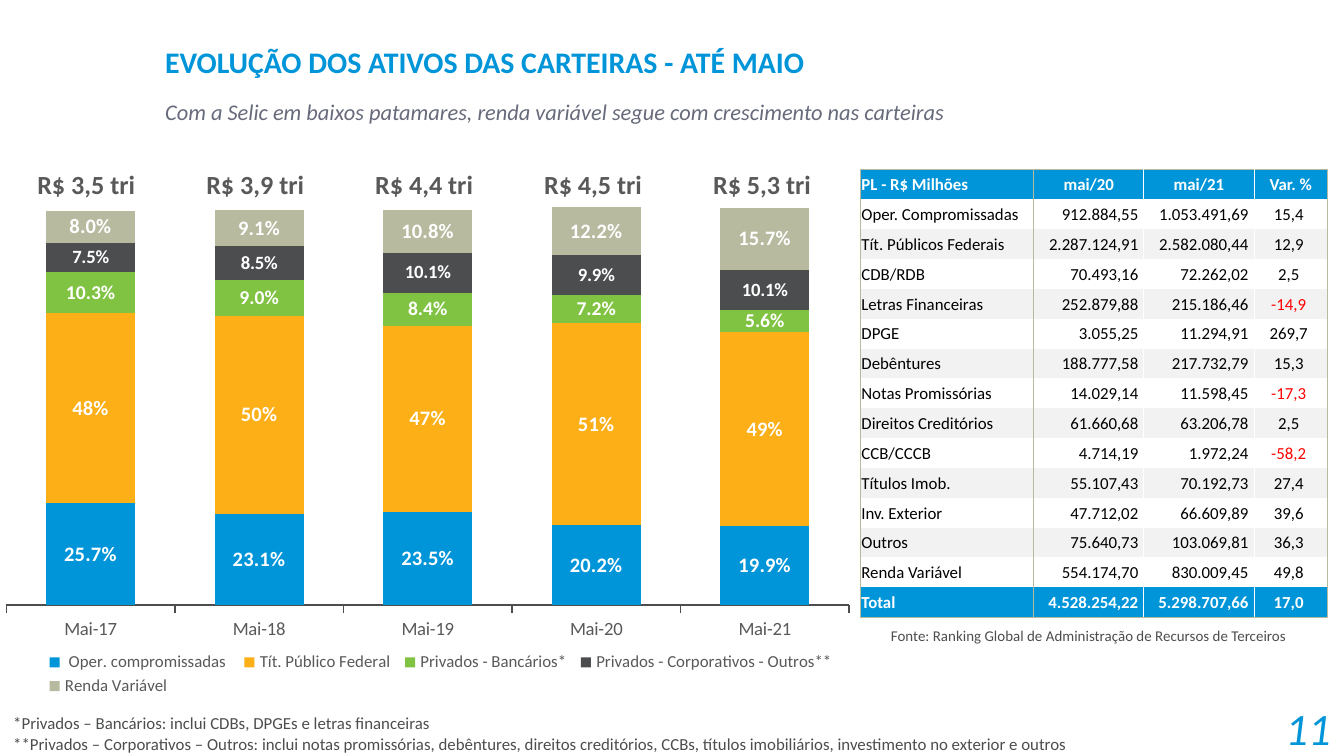
from lxml.etree import SubElement
from pptx import Presentation
from pptx.chart.data import CategoryChartData
from pptx.dml.color import RGBColor
from pptx.enum.chart import XL_CHART_TYPE, XL_LABEL_POSITION, XL_LEGEND_POSITION, XL_TICK_MARK
from pptx.enum.text import MSO_ANCHOR, PP_ALIGN
from pptx.oxml import parse_xml
from pptx.oxml.ns import nsdecls, qn
from pptx.util import Pt

FONT = "Calibri"
BLUE, DARK, GREY, SAND = "0095D9", "4C4D4F", "595959", "B7BA9F"
WHITE, BLACK, RED, BAND = "FFFFFF", "000000", "FF0000", "F2F2F2"
LEFT, CENTER, RIGHT = PP_ALIGN.LEFT, PP_ALIGN.CENTER, PP_ALIGN.RIGHT

# Content
TITLE = "EVOLUÇÃO DOS ATIVOS DAS CARTEIRAS - ATÉ MAIO"
SUBTITLE = "Com a Selic em baixos patamares, renda variável segue com crescimento nas carteiras"
NOTES = ("*Privados – Bancários: inclui CDBs, DPGEs e letras financeiras \v"
         "**Privados – Corporativos – Outros: inclui notas promissórias, debêntures, direitos "
         "creditórios, CCBs, títulos imobiliários, investimento no exterior e outros")
SOURCE = "Fonte: Ranking Global de Administração de Recursos de Terceiros"
MONTHS = ["Mai-17", "Mai-18", "Mai-19", "Mai-20", "Mai-21"]
TOTALS = ["R$ 3,5 tri", "R$ 3,9 tri", "R$ 4,4 tri", "R$ 4,5 tri", "R$ 5,3 tri"]
# Name, values, colour, label size, label format
SERIES = [
    (" Oper. compromissadas ", [0.257, 0.231, 0.235, 0.202, 0.199], BLUE, 11, "0.0%"),
    ("Tít. Público Federal", [0.48, 0.5, 0.47, 0.51, 0.49], "FCAF17", 11, "0%"),
    ("Privados - Bancários*", [0.103, 0.09, 0.084, 0.072, 0.056], "80C342", 10.5, "0.0%"),
    ("Privados - Corporativos - Outros**", [0.075, 0.085, 0.101, 0.099, 0.101], DARK, 10, "0.0%"),
    ("Renda Variável", [0.08, 0.091, 0.108, 0.122, 0.157], SAND, 11, "0.0%"),
]
ROWS = [
    ("PL - R$ Milhões", "mai/20", "mai/21", "Var. %"),
    ("Oper. Compromissadas", "912.884,55", "1.053.491,69", "15,4"),
    ("Tít. Públicos Federais", "2.287.124,91", "2.582.080,44", "12,9"),
    ("CDB/RDB", "70.493,16", "72.262,02", "2,5"),
    ("Letras Financeiras", "252.879,88", "215.186,46", "-14,9"),
    ("DPGE", "3.055,25", "11.294,91", "269,7"),
    ("Debêntures", "188.777,58", "217.732,79", "15,3"),
    ("Notas Promissórias", "14.029,14", "11.598,45", "-17,3"),
    ("Direitos Creditórios", "61.660,68", "63.206,78", "2,5"),
    ("CCB/CCCB", "4.714,19", "1.972,24", "-58,2"),
    ("Títulos Imob.", "55.107,43", "70.192,73", "27,4"),
    ("Inv. Exterior", "47.712,02", "66.609,89", "39,6"),
    ("Outros", "75.640,73", "103.069,81", "36,3"),
    ("Renda Variável", "554.174,70", "830.009,45", "49,8"),
    ("Total", "4.528.254,22", "5.298.707,66", "17,0"),
]
COL_WIDTHS = [93, 59, 59, 39.5]
ROW_HEIGHT = 16


def rgb(color):
    return RGBColor.from_string(color)


def style(font, size, color, bold=False, italic=False):
    font.name, font.size, font.bold, font.italic = FONT, Pt(size), bold, italic
    font.color.rgb = rgb(color)


def write(tf, text, size=9, color=DARK, bold=False, italic=False, align=LEFT):
    p = tf.paragraphs[0]
    p.text, p.alignment = text, align
    for r in p.runs:
        style(r.font, size, color, bold, italic)


def text_box(s, box, text, anchor=MSO_ANCHOR.TOP, **fmt):
    tf = s.shapes.add_textbox(*map(Pt, box)).text_frame
    tf.word_wrap, tf.vertical_anchor = True, anchor
    write(tf, text, **fmt)


def set_layout(parent, index, target, x, y, w, h):
    """Place a chart part by fractions of the chart area."""
    for old in parent.findall(qn("c:layout")):
        parent.remove(old)
    inner = '<c:layoutTarget val="inner"/>' if target else ""
    parent.insert(index, parse_xml(
        f'<c:layout {nsdecls("c")}><c:manualLayout>{inner}'
        f'<c:xMode val="edge"/><c:yMode val="edge"/><c:x val="{x}"/><c:y val="{y}"/>'
        f'<c:w val="{w}"/><c:h val="{h}"/></c:manualLayout></c:layout>'))


def add_borders(cell, **colors):
    tcPr = cell._tc.get_or_add_tcPr()
    for i, (side, color) in enumerate(colors.items()):
        ln = SubElement(tcPr, qn(f"a:ln{side}"), w=str(Pt(0.5)))
        fill = SubElement(ln, qn("a:solidFill"))
        SubElement(fill, qn("a:srgbClr"), val=color)
        tcPr.insert(i, ln)


def add_chart(s):
    data = CategoryChartData()
    data.categories = MONTHS
    for name, values, *_ in SERIES:
        data.add_series(name, values)
    chart = s.shapes.add_chart(XL_CHART_TYPE.COLUMN_STACKED, Pt(3), Pt(66.2),
                               Pt(456.5), Pt(309), data).chart
    style(chart.font, 10, BLACK, bold=True)
    chart.has_title = False
    plot = chart.plots[0]
    plot.gap_width, plot.overlap, plot.vary_by_categories = 89, 100, False
    for series, (_, _, color, size, fmt) in zip(plot.series, SERIES):
        series.format.fill.solid()
        series.format.fill.fore_color.rgb = rgb(color)
        labels = series.data_labels
        labels.show_value, labels.position = True, XL_LABEL_POSITION.CENTER
        labels.number_format, labels.number_format_is_linked = fmt, False
        style(labels.font, size, WHITE, bold=True)

    # Axes: the hidden scale leaves room for the totals above the bars
    values, months = chart.value_axis, chart.category_axis
    values.minimum_scale, values.maximum_scale = 0, 1.2
    values.visible = values.has_major_gridlines = False
    months.major_tick_mark = XL_TICK_MARK.OUTSIDE
    months.format.line.color.rgb = rgb(DARK)
    months.format.line.width = Pt(0.75)
    style(months.tick_labels.font, 10, GREY)

    chart.has_legend = True
    legend = chart.legend
    legend.position, legend.include_in_layout = XL_LEGEND_POSITION.BOTTOM, False
    style(legend.font, 9, GREY)
    set_layout(legend._element, 1, False, 0.04, 0.91, 0.94, 0.09)
    set_layout(chart._chartSpace.chart.plotArea, 0, True, 0, 0.011, 0.99, 0.824)


def add_assets_table(s):
    frame = s.shapes.add_table(len(ROWS), len(COL_WIDTHS), Pt(460.8), Pt(90.8),
                               Pt(sum(COL_WIDTHS)), Pt(ROW_HEIGHT * len(ROWS)))
    table = frame.table
    table.first_row = table.horz_banding = False
    # "No style, no grid"
    table._tbl.tblPr.find(qn("a:tableStyleId")).text = "{2D5ABB26-0587-4C30-8999-92F81FD0307C}"
    for column, width in zip(table.columns, COL_WIDTHS):
        column.width = Pt(width)
    last_row, last_col = len(ROWS) - 1, len(COL_WIDTHS) - 1
    for i, row in enumerate(ROWS):
        table.rows[i].height = Pt(ROW_HEIGHT)
        strong = i in (0, last_row)
        for j, text in enumerate(row):
            cell = table.cell(i, j)
            cell.vertical_anchor = MSO_ANCHOR.MIDDLE
            cell.margin_left = cell.margin_top = Pt(0.7)
            cell.margin_right = Pt(3 if i and j else 0.7)
            cell.margin_bottom = 0
            if strong or i % 2 == 0:
                cell.fill.solid()
                cell.fill.fore_color.rgb = rgb(BLUE if strong else BAND)
            else:
                cell.fill.background()
            color = WHITE if strong else RED if text.startswith("-") else BLACK
            align = LEFT if j == 0 else CENTER if i == 0 or j == last_col else RIGHT
            write(cell.text_frame, text, color=color, bold=strong, align=align)
            borders = {"L": SAND if j < 2 else WHITE,
                       "R": SAND if j in (0, last_col) else WHITE}
            if i == 0:
                borders["T"] = SAND
            if i == last_row:
                borders["B"] = SAND
            add_borders(cell, **borders)


def main():
    prs = Presentation()
    prs.slide_width, prs.slide_height = Pt(720), Pt(405)
    s = prs.slides.add_slide(prs.slide_layouts[6])

    # Heading and page number
    text_box(s, (677.5, 374.5, 42.5, 30.5), "11", MSO_ANCHOR.MIDDLE,
             size=24, color=BLUE, italic=True, align=RIGHT)
    text_box(s, (81.4, 11.5, 505, 42.5), TITLE, MSO_ANCHOR.MIDDLE,
             size=16, color=BLUE, bold=True)
    text_box(s, (81.4, 49, 505, 25), SUBTITLE, size=12, color="666A7A", italic=True)

    # Chart with a total above each bar
    add_chart(s)
    for i, total in enumerate(TOTALS):
        text_box(s, (12.9 + 90.5 * i, 86.5, 76, 22), total, size=14, color=GREY, bold=True)

    # Table, source and footnotes
    add_assets_table(s)
    text_box(s, (470.2, 332, 232, 17), SOURCE, size=8)
    text_box(s, (0, 378.5, 677, 29), NOTES)
    prs.save("out.pptx")


if __name__ == "__main__":
    main()
